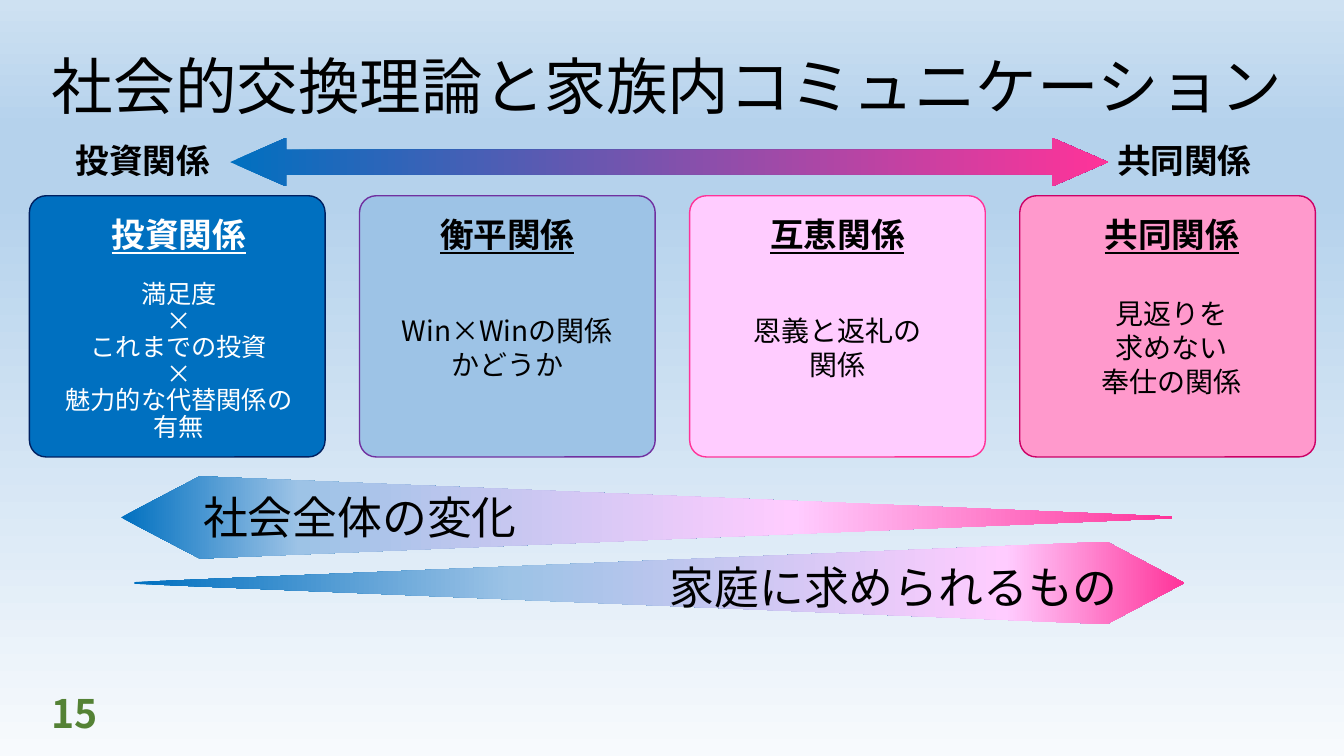
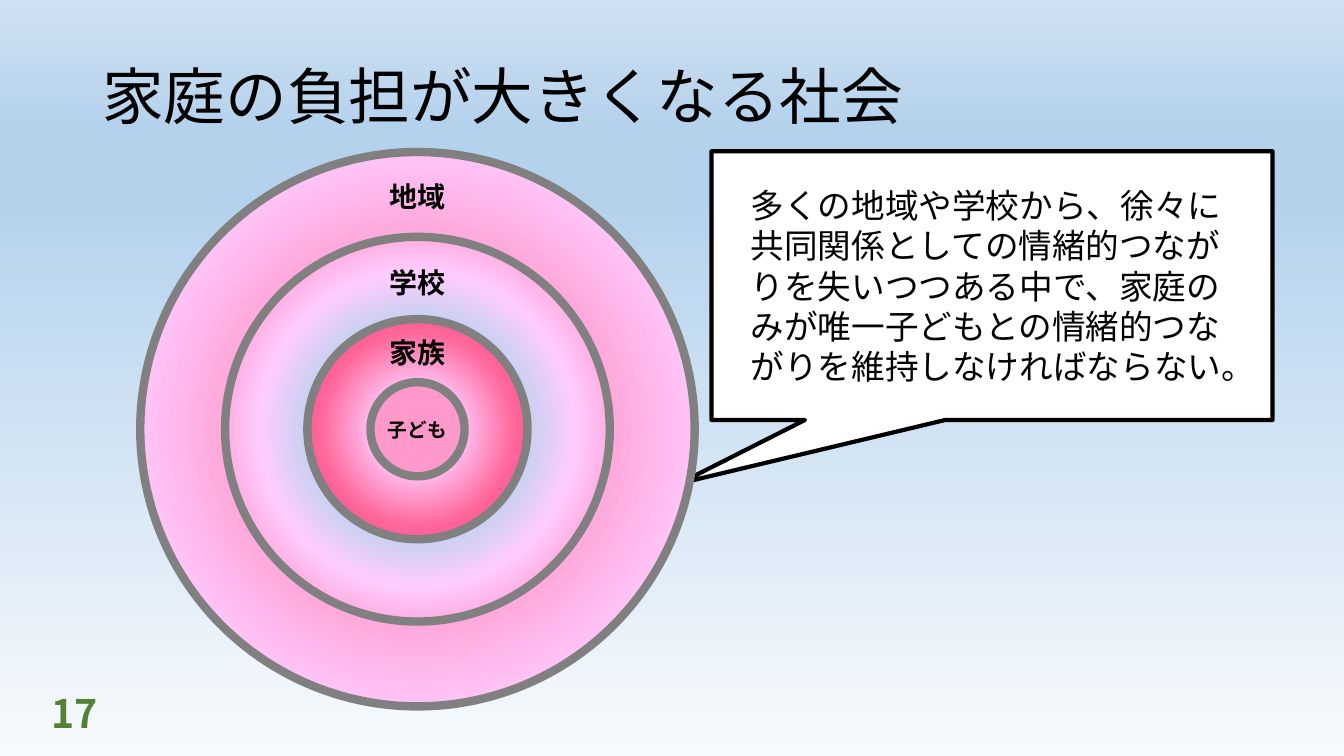
from lxml.etree import SubElement
from pptx import Presentation
from pptx.dml.color import RGBColor
from pptx.enum.lang import MSO_LANGUAGE_ID
from pptx.enum.shapes import MSO_SHAPE
from pptx.enum.text import MSO_ANCHOR, PP_ALIGN
from pptx.oxml.ns import qn
from pptx.util import Inches, Pt

BLACK = RGBColor(0x00, 0x00, 0x00)
WHITE = RGBColor(0xFF, 0xFF, 0xFF)
GRAY = RGBColor(0x80, 0x80, 0x80)
GREEN = RGBColor(0x54, 0x82, 0x35)
NAVY = RGBColor(0x00, 0x20, 0x60)
BLUE = RGBColor(0x00, 0x70, 0xC0)
SKY = RGBColor(0x9D, 0xC3, 0xE6)
PALE_BLUE = RGBColor(0xB5, 0xD2, 0xEC)
MIST = RGBColor(0xCE, 0xE1, 0xF2)
FROST = RGBColor(0xF7, 0xFA, 0xFD)
PURPLE = RGBColor(0x70, 0x30, 0xA0)
CRIMSON = RGBColor(0xCC, 0x00, 0x66)
HOT_PINK = RGBColor(0xFF, 0x33, 0x99)
ROSE = RGBColor(0xFF, 0x66, 0x99)
PINK = RGBColor(0xFF, 0x99, 0xCC)
PALE_PINK = RGBColor(0xFF, 0xCC, 0xFF)

COLUMNS, ROWS = 160, 90
FONT = "Noto Sans CJK JP"
LEFT, CENTER, RIGHT = PP_ALIGN.LEFT, PP_ALIGN.CENTER, PP_ALIGN.RIGHT
TOP, MIDDLE = MSO_ANCHOR.TOP, MSO_ANCHOR.MIDDLE


def cells(*counts):
    """Turn counts of square grid cells into lengths."""
    return [Inches(n / 12) for n in counts]


class Deck:
    """Hold the presentation, its style and the current slide."""

    def __init__(self):
        """Set the slide size and the shared background."""
        self.prs = Presentation()
        self.prs.slide_width, self.prs.slide_height = cells(COLUMNS, ROWS)
        master = self.prs.slide_master
        stops = [(0, FROST), (74, PALE_BLUE), (83, PALE_BLUE), (100, MIST)]
        self.gradient(master.background.fill, master.element, stops, angle=270)

    def gradient(self, fill, element, stops, angle=None):
        """Fill with colour stops, along an angle or outward from the centre."""
        fill.gradient()
        grad = element.find(".//" + qn("a:gradFill"))
        grad.clear()
        grad.set("rotWithShape", "1")
        gs_list = SubElement(grad, qn("a:gsLst"))
        for position, color in stops:
            gs = SubElement(gs_list, qn("a:gs"), pos=str(position * 1000))
            SubElement(gs, qn("a:srgbClr"), val=str(color))
        if angle is None:
            circle = SubElement(grad, qn("a:path"), {"path": "circle"})
            sides = {side: "50000" for side in "ltrb"}
            SubElement(circle, qn("a:fillToRect"), sides)
        else:
            SubElement(grad, qn("a:lin"), ang=str(angle * 60000), scaled="0")

    def slide(self, title, title_at, number):
        """Start a slide with its title and number."""
        self.s = self.prs.slides.add_slide(self.prs.slide_layouts[6])
        self.text(title, title_at, 44, anchor=MIDDLE, spacing=0.9)
        self.text(number, (5, 82.2, 36, 5.3), 28, color=GREEN, bold=True, anchor=MIDDLE)

    def set_text(self, tf, text, size, color=BLACK, bold=False, underline=False,
                 align=LEFT, anchor=TOP, spacing=None):
        """Put styled text into a frame, one paragraph per line."""
        tf.word_wrap = True
        tf.vertical_anchor = anchor
        tf.text = text
        for p in tf.paragraphs:
            p.alignment = align
            p.line_spacing = spacing
            for r in p.runs:
                font = r.font
                font.size, font.bold, font.underline = Pt(size), bold, underline
                font.color.rgb = color
                font.name = FONT
                font.language_id = MSO_LANGUAGE_ID.JAPANESE
                SubElement(r._r.rPr, qn("a:ea"), typeface=FONT)

    def text(self, text, at, size, **style):
        """Add a text box."""
        box = self.s.shapes.add_textbox(*cells(*at))
        self.set_text(box.text_frame, text, size, **style)

    def paint(self, sp, fill, line=None, width=1, angle=None):
        """Give a shape a plain or gradient fill and an optional outline."""
        sp.shadow.inherit = False
        if isinstance(fill, list):
            self.gradient(sp.fill, sp._element.spPr, fill, angle)
        else:
            sp.fill.solid()
            sp.fill.fore_color.rgb = fill
        if line is None:
            sp.line.fill.background()
        else:
            sp.line.color.rgb = line
            sp.line.width = Pt(width)

    def shape(self, kind, at, fill, adjust=(), **look):
        """Add a preset shape."""
        sp = self.s.shapes.add_shape(kind, *cells(*at))
        for i, value in enumerate(adjust):
            sp.adjustments[i] = value
        self.paint(sp, fill, **look)
        return sp

    def wedge(self, tail, shoulder, tip, middle, stops):
        """Add an arrow that widens from a thin tail to a blunt tip."""
        points = [(tail, middle - 0.1), (shoulder, middle - 4.9), (tip, middle),
                  (shoulder, middle + 4.9), (tail, middle + 0.1)]
        start, *rest = [cells(*point) for point in points]
        builder = self.s.shapes.build_freeform(*start, scale=1.0)
        builder.add_line_segments(rest, close=True)
        self.paint(builder.convert_to_shape(), stops, angle=0)

    def card(self, column, fill, line, color, shift, heading, body, size, drop=0, spacing=None):
        """Add a rounded card with an underlined heading and a body."""
        x, y, width = 3.5 + 39.3 * column, 23.3, 35.2
        self.shape(MSO_SHAPE.ROUNDED_RECTANGLE, (x, y, width, 31.1), fill, (0.064,), line=line)
        x, width = x + 2.2 + shift, width - 4.4
        self.text(heading, (x, y + 1.6, width, 6), 24, color=color, bold=True,
                  underline=True, align=CENTER)
        self.text(body, (x, y + 7.8 + drop, width, 20.5), size, color=color,
                  align=CENTER, anchor=MIDDLE, spacing=spacing)

    def ring(self, center, diameter, fill):
        """Add an outlined circle around a centre."""
        x, y = (c - diameter / 2 for c in center)
        return self.shape(MSO_SHAPE.OVAL, (x, y, diameter, diameter), fill, line=GRAY, width=6)


def exchange_slide(deck):
    """Build the slide on exchange theory and family communication."""
    deck.slide("社会的交換理論と家族内コミュニケーション", (5, 1.9, 151.4, 17.4), "15")
    for x, label in ((1.6, "投資関係"), (125.6, "共同関係")):
        deck.text(label, (x, 16.1, 30.8, 6), 24, bold=True, align=CENTER)
    deck.shape(MSO_SHAPE.LEFT_RIGHT_ARROW, (27.4, 16.4, 104.5, 5.8),
               [(0, BLUE), (100, HOT_PINK)], (0.5, 1.148), angle=0)
    deck.card(0, BLUE, NAVY, WHITE, 0.2, "投資関係",
              "満足度\n×\nこれまでの投資\n×\n魅力的な代替関係の有無",
              18, drop=1.7, spacing=Pt(19))
    deck.card(1, SKY, PURPLE, BLACK, 0, "衡平関係", "Win×Winの関係\nかどうか", 20)
    deck.card(2, PALE_PINK, HOT_PINK, BLACK, 0, "互恵関係", "恩義と返礼の\n関係", 20)
    deck.card(3, PINK, CRIMSON, BLACK, 0.5, "共同関係", "見返りを\n求めない\n奉仕の関係", 20)
    deck.wedge(139.6, 23.8, 14.4, 61.6,
               [(0, BLUE), (17, SKY), (64, PALE_PINK), (100, HOT_PINK)])
    deck.text("社会全体の変化", (23, 57.7, 44, 7.7), 32)
    deck.wedge(16, 131.8, 141, 69.4,
               [(0, BLUE), (36, SKY), (83, PALE_PINK), (100, HOT_PINK)])
    deck.text("家庭に求められるもの", (73.8, 66, 60.5, 7.7), 32, align=RIGHT)


def burden_slide(deck):
    """Build the slide on the growing burden of the family."""
    deck.slide("家庭の負担が大きくなる社会", (11, 4.8, 138, 14), "17")
    callout = deck.shape(MSO_SHAPE.RECTANGULAR_CALLOUT, (84.7, 18, 66.8, 32), WHITE,
                         (-0.557, 0.736), line=BLACK, width=3)
    tf = callout.text_frame
    tf.margin_left = tf.margin_right = Inches(0.39)
    deck.set_text(tf, "多くの地域や学校から、徐々に共同関係としての情緒的つながりを失いつつある中で、"
                  "家庭のみが唯一子どもとの情緒的つながりを維持しなければならない。", 24, anchor=MIDDLE)
    center = (49.7, 51.1)
    rings = [
        (66, 20.8, "地域", [(0, ROSE), (77, PALE_PINK), (91, PALE_BLUE), (100, BLUE)]),
        (45.8, 31, "学校", [(0, SKY), (35, PALE_BLUE), (58, PALE_PINK), (100, ROSE)]),
        (26.2, 39.4, "家族", [(0, PALE_PINK), (24, PALE_PINK), (63, ROSE), (100, HOT_PINK)]),
    ]
    for diameter, top, label, stops in rings:
        deck.ring(center, diameter, stops)
        deck.text(label, (center[0] - 8, top, 16, 5.3), 20, bold=True, align=CENTER)
    tf = deck.ring(center, 11.2, PINK).text_frame
    tf.margin_left = tf.margin_right = tf.margin_top = tf.margin_bottom = 0
    deck.set_text(tf, "子ども", 14, bold=True, align=CENTER, anchor=MIDDLE)


def main():
    """Build and save the deck."""
    deck = Deck()
    exchange_slide(deck)
    burden_slide(deck)
    deck.prs.save("out.pptx")


if __name__ == "__main__":
    main()
